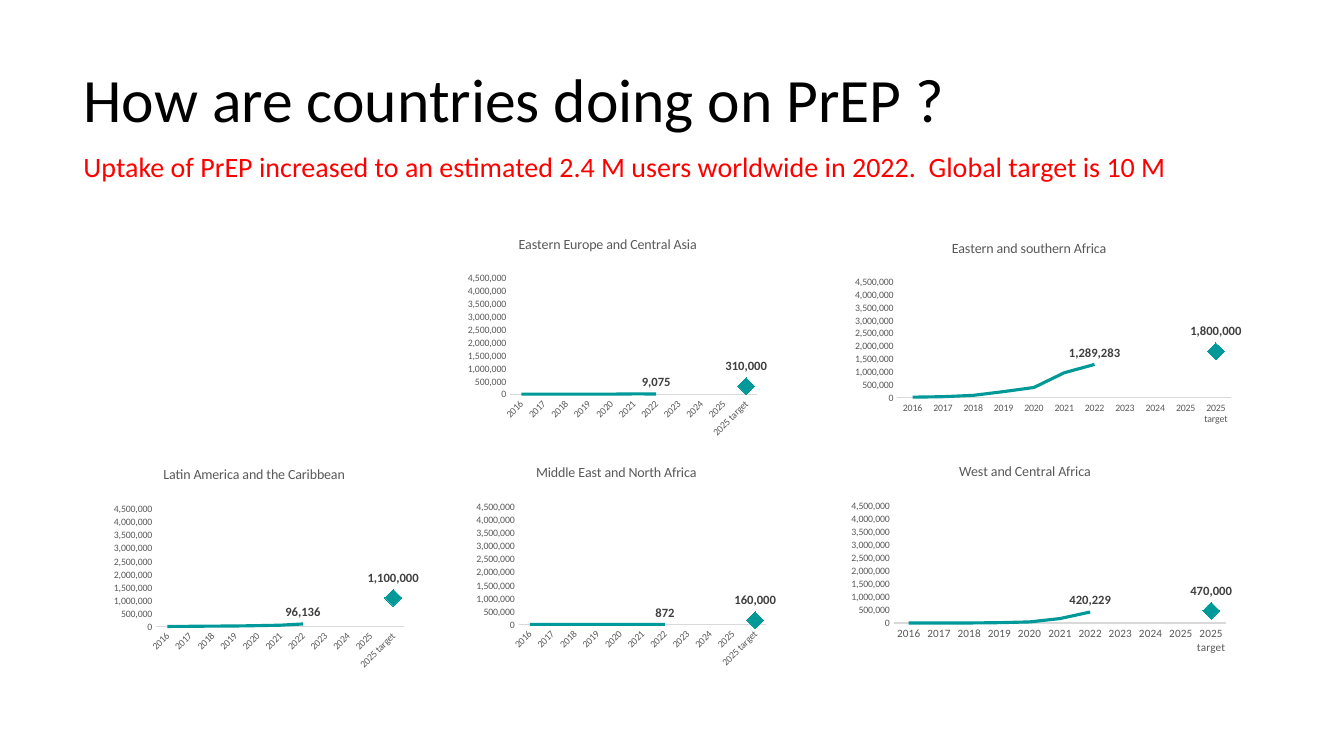
from lxml import etree
from pptx import Presentation
from pptx import util as u
from pptx.chart.data import CategoryChartData
from pptx.dml.color import RGBColor
from pptx.enum import chart as ch
from pptx.enum import text
from pptx.oxml import ns

TEAL, GREY, PALE = "009999", "595959", "D9D9D9"
YEARS = [str(year) for year in range(2016, 2026)] + ["2025 target"]
LATEST, TARGET = 6, 10

# Region: left, top, width, height, year label size, users 2016-2022, 2025 target
REGIONS = {
    "Eastern Europe and Central Asia": (
        305, 159, 258, 173, 7, [65, 400, 125, 1735, 2474, 9833, 9075], 310000),
    "Eastern and southern Africa": (
        561, 161.5, 348, 173, 7,
        [18601, 37584, 89435, 234210, 395304, 965915, 1289283], 1800000),
    "Latin America and the Caribbean": (
        52, 323.5, 259, 175, 7,
        [1160, 6656, 13707, 19128, 32019, 49336, 96136], 1100000),
    "Middle East and North Africa": (
        311, 322, 258.5, 175, 7, [300, 436, 0, 0, 631, 625, 872], 160000),
    "West and Central Africa": (
        558.5, 321, 347, 175, 8,
        [980, 1310, 574, 12608, 41275, 169211, 420229], 470000),
}

PLOT_LAYOUT = (
    f'<c:layout {ns.nsdecls("c")}><c:manualLayout><c:layoutTarget val="inner"/>'
    '<c:xMode val="edge"/><c:yMode val="edge"/><c:x val="0.23"/><c:y val="0.23"/>'
    '<c:w val="0.685"/><c:h val="0.479"/></c:manualLayout></c:layout>')
WHITE_AREA = (
    f'<c:spPr {ns.nsdecls("c", "a")}><a:solidFill><a:srgbClr val="FFFFFF"/>'
    '</a:solidFill><a:ln><a:noFill/></a:ln></c:spPr>')


def color(value):
    return RGBColor.from_string(value)


def style(font, size, value, bold=False):
    font.name = "Calibri"
    font.size = u.Pt(size)
    font.bold = bold
    font.color.rgb = color(value)


deck = Presentation()
deck.slide_width, deck.slide_height = u.Pt(960), u.Pt(540)
slide = deck.slides.add_slide(deck.slide_layouts[5])

# Heading
heading = slide.shapes.title
heading.left, heading.top = u.Pt(52.5), u.Pt(42.5)
heading.width, heading.height = u.Pt(825), u.Pt(61)
heading.text_frame.text = "How are countries doing on PrEP ?"
heading.text_frame.vertical_anchor = text.MSO_ANCHOR.MIDDLE
heading_line = heading.text_frame.paragraphs[0]
heading_line.alignment = text.PP_ALIGN.LEFT
heading_line.line_spacing = 0.9
style(heading_line.runs[0].font, 44, "000000")

# Key message
message = slide.shapes.add_textbox(u.Pt(52.5), u.Pt(103.5), u.Pt(790.5), u.Pt(31.5))
message.text_frame.word_wrap = False
message.text_frame.auto_size = text.MSO_AUTO_SIZE.SHAPE_TO_FIT_TEXT
message.text_frame.text = ("Uptake of PrEP increased to an estimated 2.4 M users "
                           "worldwide in 2022.  Global target is 10 M")
style(message.text_frame.paragraphs[0].runs[0].font, 20, "FF0000")

# One chart per region
for region, (left, top, width, height, year_size, users, target) in REGIONS.items():
    uptake = CategoryChartData(number_format="#,##0")
    uptake.categories = YEARS
    uptake.add_series(region, users + [None] * 3 + [target])
    chart = slide.shapes.add_chart(
        ch.XL_CHART_TYPE.LINE_MARKERS, u.Pt(left), u.Pt(top), u.Pt(width),
        u.Pt(height), uptake).chart
    style(chart.font, 10, "000000")
    chart.has_legend = False
    chart.has_title = True
    chart.chart_title.text_frame.text = region
    style(chart.chart_title.text_frame.paragraphs[0].runs[0].font, 10, GREY)
    chart.chart_title.include_in_layout = False

    # Axes
    years, amounts = chart.category_axis, chart.value_axis
    for axis, size in ((years, year_size), (amounts, 7)):
        style(axis.tick_labels.font, size, GREY)
        axis.major_tick_mark = axis.minor_tick_mark = ch.XL_TICK_MARK.NONE
        axis.has_major_gridlines = False
    years.format.line.color.rgb = color(PALE)
    years.format.line.width = u.Pt(0.75)
    amounts.format.line.fill.background()
    amounts.minimum_scale, amounts.maximum_scale = 0, 4500000
    amounts.major_unit = 500000
    amounts.tick_labels.number_format = "#,##0"
    amounts.tick_labels.number_format_is_linked = False

    # Uptake line, with a diamond for the target
    chart.plots[0].vary_by_categories = False
    line = chart.plots[0].series[0]
    line.smooth = False
    line.format.line.color.rgb = color(TEAL)
    line.format.line.width = u.Pt(2.25)
    line.marker.style = ch.XL_MARKER_STYLE.NONE
    diamond = line.points[TARGET].marker
    diamond.style = ch.XL_MARKER_STYLE.DIAMOND
    diamond.size = 12
    diamond.format.fill.solid()
    diamond.format.fill.fore_color.rgb = color(TEAL)
    diamond.format.line.color.rgb = color(TEAL)
    line.data_labels.show_value = False
    for index in (LATEST, TARGET):
        label = line.points[index].data_label
        style(label.font, 9, "404040", bold=True)
        label.position = ch.XL_LABEL_POSITION.ABOVE

    # Plot position and white chart area
    plot_area = chart.element.find(".//" + ns.qn("c:plotArea"))
    for layout in plot_area.findall(ns.qn("c:layout")):
        plot_area.remove(layout)
    plot_area.insert(0, etree.fromstring(PLOT_LAYOUT))
    chart.element.find(ns.qn("c:chart")).addnext(etree.fromstring(WHITE_AREA))

deck.save("out.pptx")
